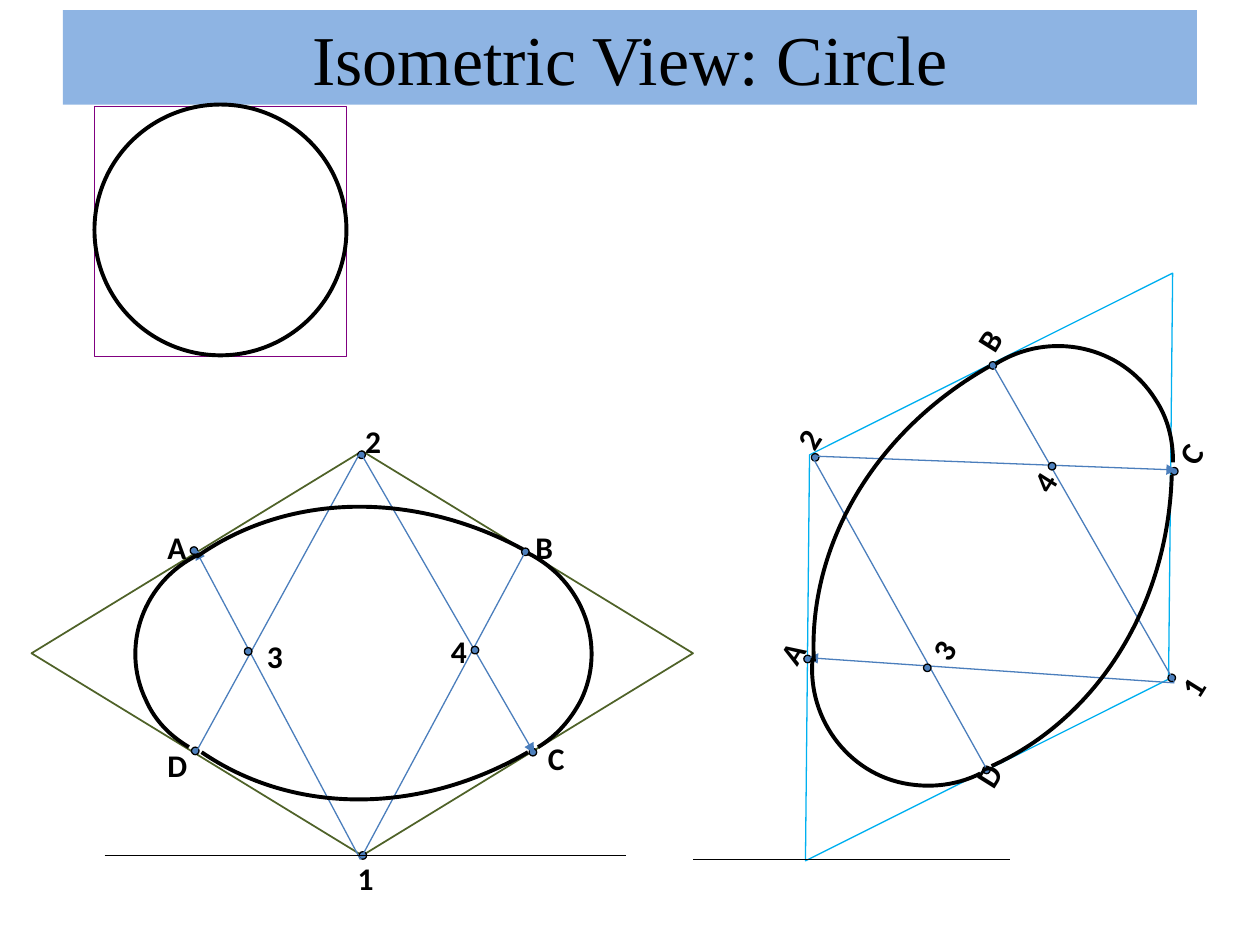
from lxml import etree
from pptx import Presentation
from pptx.dml.color import RGBColor
from pptx.enum.shapes import MSO_CONNECTOR, MSO_SHAPE
from pptx.enum.text import MSO_ANCHOR, MSO_AUTO_SIZE, PP_ALIGN
from pptx.oxml.ns import qn
from pptx.util import Inches, Pt

STRAIGHT = MSO_CONNECTOR.STRAIGHT
RECTANGLE, OVAL, DIAMOND = MSO_SHAPE.RECTANGLE, MSO_SHAPE.OVAL, MSO_SHAPE.DIAMOND
MIDDLE, CENTER = MSO_ANCHOR.MIDDLE, PP_ALIGN.CENTER
GROW = MSO_AUTO_SIZE.SHAPE_TO_FIT_TEXT

COLORS = {
    "banner": "8EB4E3", "ink": "000000", "paper": "FFFFFF", "dot": "4F81BD",
    "ray": "4B7EBC", "olive": "4F6228", "sky": "00B0F0", "purple": "800080",
}
DOT_SIZE = 0.06
LABEL_HEIGHT = 0.4
TITLE = "Isometric View: Circle"
TITLE_FORMAT = {"name": "Times New Roman", "size": Pt(40), "bold": False}
LABEL_FORMAT = {"name": "Calibri", "size": Pt(18), "bold": True}

TOP_VIEW = {
    "rotation": 0,
    "rhombus": ((0.25, 3.58, 5.25, 3.21), None, "olive", 1),
    "dots": [(1.51, 4.34), (1.52, 5.93), (4.2, 5.94), (4.14, 4.35), (2.85, 6.76), (2.84, 3.58)],
    "rays": [
        ((2.86, 6.82), (1.55, 4.36), True),
        ((2.86, 6.82), (4.18, 4.36), False),
        ((2.86, 3.59), (1.55, 5.98), False),
        ((2.86, 3.59), (4.24, 5.98), True),
    ],
    "centers": [(1.94, 5.14), (3.74, 5.13)],
    "labels": [
        ("1", 2.74, 6.77), ("4", 3.48, 4.97), ("2", 2.8, 3.3), ("3", 2.02, 5.01),
        ("A", 1.23, 4.14), ("B", 4.15, 4.14), ("D", 1.23, 5.87), ("C", 4.25, 5.82),
    ],
    "arcs": [
        [(1.56, 4.42), (2.28, 3.91), (3.28, 3.89), (4.15, 4.36)],
        [(1.6, 5.97), (2.33, 6.47), (3.33, 6.47), (4.19, 5.97)],
        [(4.19, 4.39), (4.63, 4.61), (4.82, 5.13), (4.61, 5.56),
         (4.53, 5.71), (4.42, 5.84), (4.27, 5.93)],
        [(1.58, 4.4), (1.14, 4.61), (0.95, 5.13), (1.16, 5.56),
         (1.23, 5.72), (1.35, 5.84), (1.5, 5.93)],
    ],
    "ground": ((0.83, 6.79), (4.97, 6.79)),
}
SIDE_VIEW = {
    "rotation": 302,
    "rhombus": ((5.1, 2.82, 5.5, 3.36), "paper", "sky", 0.75),
    "dots": [(6.38, 5.2), (7.8, 6.08), (9.29, 3.71), (7.85, 2.87), (9.27, 5.35), (6.44, 3.6)],
    "rays": [
        ((9.32, 5.42), (6.41, 5.22), True),
        ((9.32, 5.41), (7.87, 2.88), False),
        ((6.45, 3.63), (7.84, 6.12), False),
        ((6.45, 3.62), (9.34, 3.73), True),
    ],
    "centers": [(7.33, 5.27), (8.32, 3.67)],
    "labels": [
        ("1", 9.3, 5.25), ("4", 8.12, 3.62), ("2", 6.25, 3.28), ("3", 7.32, 4.95),
        ("A", 6.1, 4.97), ("B", 7.67, 2.48), ("D", 7.66, 5.94), ("C", 9.27, 3.38),
    ],
    "arcs": [
        [(6.46, 5.25), (6.41, 4.32), (6.95, 3.42), (7.85, 2.91)],
        [(7.87, 6.08), (8.71, 5.7), (9.27, 4.81), (9.3, 3.77)],
        [(7.9, 2.89), (8.33, 2.62), (8.9, 2.74), (9.17, 3.17),
         (9.27, 3.32), (9.31, 3.49), (9.31, 3.67)],
        [(6.45, 5.22), (6.4, 5.72), (6.76, 6.18), (7.26, 6.23),
         (7.44, 6.25), (7.62, 6.22), (7.78, 6.14)],
    ],
    "ground": ((5.5, 6.82), (8.02, 6.82)),
}


def rgb(name):
    return RGBColor.from_string(COLORS[name])


def paint(shape, fill, line, width=0.75):
    shape.shadow.inherit = False
    if fill:
        shape.fill.solid()
        shape.fill.fore_color.rgb = rgb(fill)
    else:
        shape.fill.background()
    if line:
        shape.line.color.rgb = rgb(line)
        shape.line.width = Pt(width)
    else:
        shape.line.fill.background()


def add_preset(page, kind, place, fill, line, width=0.75, rotation=0):
    shape = page.shapes.add_shape(kind, *map(Inches, place))
    shape.rotation = rotation
    paint(shape, fill, line, width)
    return shape


def write(box, text, formats):
    para = box.text_frame.paragraphs[0]
    span = para.add_run()
    span.text = text
    span.font.color.rgb = rgb("ink")
    for name, value in formats.items():
        setattr(span.font, name, value)
    return para


def add_line(page, start, end, color, arrow=False):
    line = page.shapes.add_connector(STRAIGHT, *map(Inches, start + end))
    line.line.color.rgb = rgb(color)
    line.line.width = Pt(0.75)
    if arrow:
        etree.SubElement(line.line._get_or_add_ln(), qn("a:tailEnd"), type="triangle")
    etree.SubElement(line._element.spPr, qn("a:effectLst"))


def add_dots(page, corners, rotation):
    for left, top in corners:
        add_preset(page, OVAL, (left, top, DOT_SIZE, DOT_SIZE), "dot", "ink", rotation=rotation)


def add_label(page, text, left, top, rotation):
    width = 0.34 if text.isdigit() else 0.38
    box = page.shapes.add_textbox(*map(Inches, (left, top, width, LABEL_HEIGHT)))
    box.rotation = rotation
    box.text_frame.word_wrap = False
    box.text_frame.auto_size = GROW
    write(box, text, LABEL_FORMAT)


def add_arc(page, points):
    start, *controls = [tuple(map(Inches, point)) for point in points]
    builder = page.shapes.build_freeform(*start)
    builder.add_line_segments(controls, close=False)
    arc = builder.convert_to_shape()
    paint(arc, None, "ink", 2.25)
    steps = list(arc._element.iter(qn("a:lnTo")))
    outline = steps[0].getparent()
    for first in range(0, len(steps), 3):
        curve = etree.SubElement(outline, qn("a:cubicBezTo"))
        for step in steps[first:first + 3]:
            curve.append(step[0])
            outline.remove(step)


def draw_view(page, view):
    rotation = view["rotation"]
    add_preset(page, DIAMOND, *view["rhombus"], rotation)
    add_dots(page, view["dots"], rotation)
    for start, end, arrow in view["rays"]:
        add_line(page, start, end, "ray", arrow)
    add_dots(page, view["centers"], rotation)
    for label in view["labels"]:
        add_label(page, *label, rotation)
    for points in view["arcs"]:
        add_arc(page, points)
    add_line(page, *view["ground"], "ink")


def main():
    deck = Presentation()
    deck.slide_width, deck.slide_height = Inches(10), Inches(7.5)
    page = deck.slides.add_slide(deck.slide_layouts[6])
    banner = add_preset(page, RECTANGLE, (0.5, 0.08, 9, 0.75), "banner", None)
    banner.text_frame.vertical_anchor = MIDDLE
    write(banner, TITLE, TITLE_FORMAT).alignment = CENTER
    for view in (TOP_VIEW, SIDE_VIEW):
        draw_view(page, view)
    add_preset(page, RECTANGLE, (0.75, 0.84, 2, 1.99), "paper", "purple", 0.25)
    add_preset(page, OVAL, (0.75, 0.83, 2, 1.99), "paper", "ink", 2.25)
    deck.save("out.pptx")


if __name__ == "__main__":
    main()
